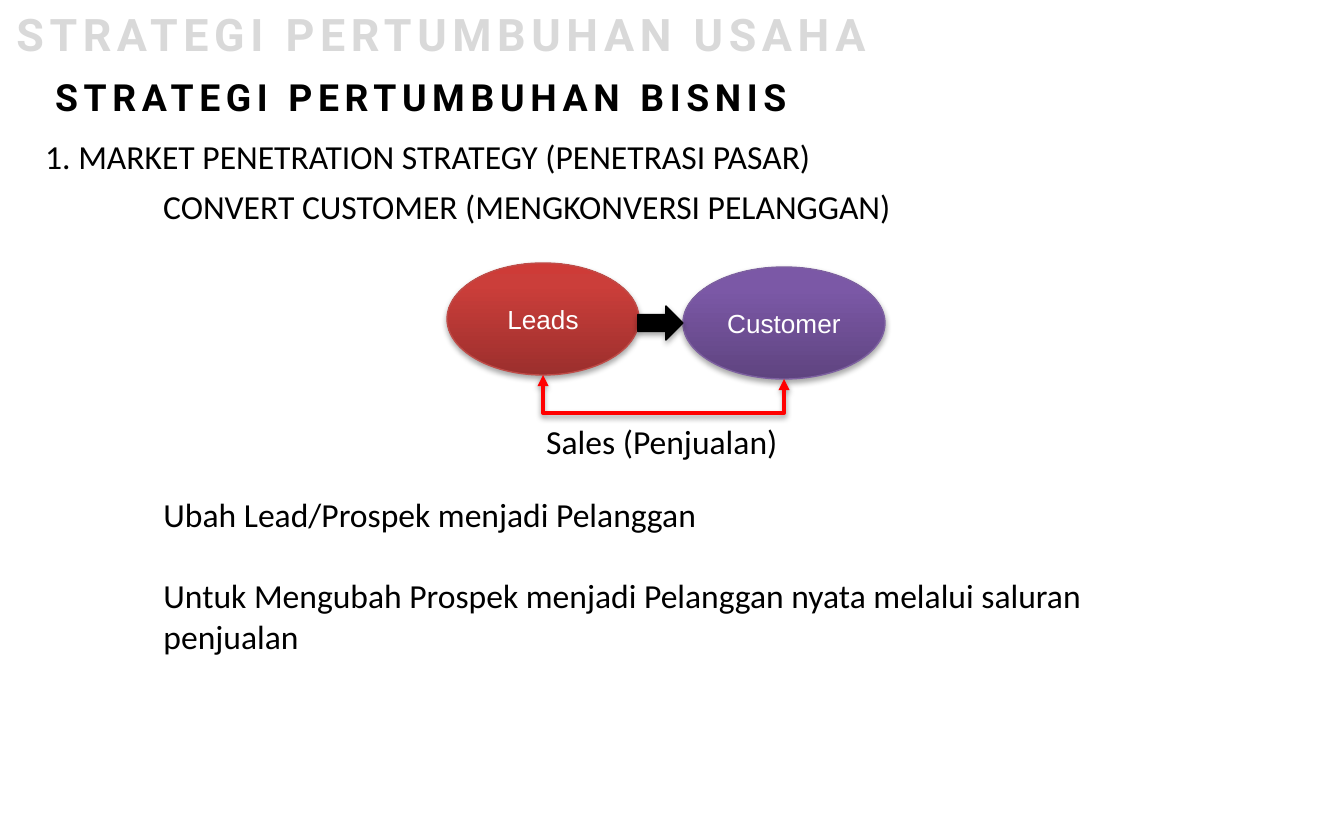
from lxml import etree
from pptx import Presentation
from pptx.dml.color import RGBColor
from pptx.enum.shapes import MSO_CONNECTOR, MSO_SHAPE
from pptx.enum.text import MSO_ANCHOR, MSO_AUTO_SIZE, PP_ALIGN
from pptx.oxml.ns import qn
from pptx.util import Emu, Pt

ELBOW = MSO_CONNECTOR.ELBOW
OVAL, ARROW = MSO_SHAPE.OVAL, MSO_SHAPE.RIGHT_ARROW
TOP, MIDDLE = MSO_ANCHOR.TOP, MSO_ANCHOR.MIDDLE
LEFT, CENTER = PP_ALIGN.LEFT, PP_ALIGN.CENTER
NO_FIT = MSO_AUTO_SIZE.NONE

# Content: boxes are (left, top, width, height) in px
TITLE = ("STRATEGI PERTUMBUHAN USAHA", (3, 0, 1341, 67))
SUBTITLE = ("STRATEGI PERTUMBUHAN BISNIS", (42, 68, 1266, 59))
LABELS = [
    ("1. MARKET PENETRATION STRATEGY (PENETRASI PASAR)", (32, 129, 800, 54)),
    ("CONVERT CUSTOMER (MENGKONVERSI PELANGGAN)", (150, 179, 770, 54)),
    ("Sales (Penjualan)", (533, 414, 261, 54)),
]
BODY = (["Ubah Lead/Prospek menjadi Pelanggan",
         "Untuk Mengubah Prospek menjadi Pelanggan nyata melalui saluran penjualan"],
        (150, 487, 992, 176))
LEADS = ("Leads", (447, 263, 192, 112), "leads")
CUSTOMER = ("Customer", (683, 267, 202, 112), "customer")
ARROW_BOX = (638, 306, 45, 34)
SALES_Y = 413

THEME = {
    "heading": ("Roboto", 24, "D9D9D9"),
    "subheading": ("Roboto", 20, "000000"),
    "text": ("Calibri", 18, "000000"),
    "node": ("Arial", 14, "FFFFFF"),
    "leads": ([(0, "9C2F2D"), (80, "CB3E3A"), (100, "CE3B37")], "BF4C48"),
    "customer": ([(0, "5F4480"), (80, "7B58A6"), (100, "7C57A8")], "7D60A0"),
    "arrow": "000000",
    "sales": "FF0000",
    "paragraph_gap": 22,
}


def px(n):
    return Emu(round(n * 914400 / 134.4))


def rgb(value):
    return RGBColor.from_string(value)


def place(shape, box):
    shape.left, shape.top, shape.width, shape.height = map(px, box)


def style(tf, role, align=LEFT, anchor=TOP, wrap=True, heading=False):
    name, size, color = THEME[role]
    tf.auto_size, tf.word_wrap, tf.vertical_anchor = NO_FIT, wrap, anchor
    for p in tf.paragraphs:
        p.alignment = align
        for r in p.runs:
            r.font.name, r.font.size, r.font.bold = name, Pt(size), heading
            r.font.color.rgb = rgb(color)
            if heading:
                r._r.get_or_add_rPr().set("spc", "300")


def text_box(s, text, box, role, **options):
    tf = s.shapes.add_textbox(*map(px, box)).text_frame
    tf.text = text
    style(tf, role, **options)


def add_shadow(effects, alpha, distance):
    shadow = etree.SubElement(effects, qn("a:outerShdw"), blurRad="40000",
                              dist=str(distance), dir="5400000", rotWithShape="0")
    color = etree.SubElement(shadow, qn("a:srgbClr"), val="000000")
    etree.SubElement(color, qn("a:alpha"), val=str(alpha * 1000))


def add_solid(s, kind, box, line):
    sp = s.shapes.add_shape(kind, *map(px, box))
    sp.line.color.rgb, sp.line.width = rgb(line), Pt(0.75)
    sp.shadow.inherit = False
    add_shadow(sp._element.spPr.find(qn("a:effectLst")), 35, 23000)
    return sp


def add_node(s, text, box, role):
    stops, line = THEME[role]
    sp = add_solid(s, OVAL, box, line)
    sp.fill.gradient()
    sp.fill.gradient_angle = 90
    stop_list = sp._element.spPr.find(".//" + qn("a:gsLst"))
    for old in list(stop_list):
        stop_list.remove(old)
    for position, color in stops:
        gs = etree.SubElement(stop_list, qn("a:gs"), pos=str(position * 1000))
        etree.SubElement(gs, qn("a:srgbClr"), val=color)
    sp.text_frame.text = text
    style(sp.text_frame, "node", CENTER, MIDDLE)


def add_sales_link(s, start_box, end_box, low_y):
    """U-shaped double arrow between the bottoms of two nodes."""
    (x1, y1), (x2, y2) = [(x + w / 2, y + h) for x, y, w, h in (start_box, end_box)]
    mid_x, mid_y = (x1 + x2) / 2, (y1 + y2) / 2
    half_w, half_h = (y2 - y1) / 2, (x2 - x1) / 2
    # The elbow is laid out upright, then turned a quarter to the left
    link = s.shapes.add_connector(ELBOW, px(mid_x + half_w), px(mid_y - half_h),
                                  px(mid_x - half_w), px(mid_y + half_h))
    link.line.color.rgb, link.line.width = rgb(THEME["sales"]), Pt(2)
    props = link._element.spPr
    props.find(qn("a:xfrm")).set("rot", "16200000")
    bend = round((low_y - y1) / (y2 - y1) * 100000)
    guides = props.find(qn("a:prstGeom")).get_or_add_avLst()
    etree.SubElement(guides, qn("a:gd"), name="adj1", fmla=f"val {bend}")
    for end in ("a:headEnd", "a:tailEnd"):
        etree.SubElement(props.find(qn("a:ln")), qn(end), type="triangle")
    add_shadow(etree.SubElement(props, qn("a:effectLst")), 38, 20000)


def main():
    prs = Presentation()
    prs.slide_width, prs.slide_height = px(1344), px(840)
    s = prs.slides.add_slide(prs.slide_layouts[1])

    # Headings
    title, body = s.shapes.title, s.placeholders[1]
    place(title, TITLE[1])
    title.text_frame.text = TITLE[0]
    style(title.text_frame, "heading", heading=True)
    text_box(s, *SUBTITLE, "subheading", heading=True)

    # Body paragraphs
    lines, box = BODY
    place(body, box)
    body.text_frame.text = "\n".join(lines)
    for i, p in enumerate(body.text_frame.paragraphs):
        pPr = p._p.get_or_add_pPr()
        pPr.set("marL", "0")
        pPr.set("indent", "0")
        etree.SubElement(pPr, qn("a:buNone"))
        p.space_before = Pt(THEME["paragraph_gap"] if i else 0)
    style(body.text_frame, "text")

    # Labels
    for text, box in LABELS:
        text_box(s, text, box, "text", wrap=False)

    # Leads to customer diagram
    for node in (LEADS, CUSTOMER):
        add_node(s, *node)
    arrow = add_solid(s, ARROW, ARROW_BOX, THEME["arrow"])
    arrow.fill.solid()
    arrow.fill.fore_color.rgb = rgb(THEME["arrow"])
    add_sales_link(s, LEADS[1], CUSTOMER[1], SALES_Y)

    prs.save("out.pptx")


if __name__ == "__main__":
    main()
